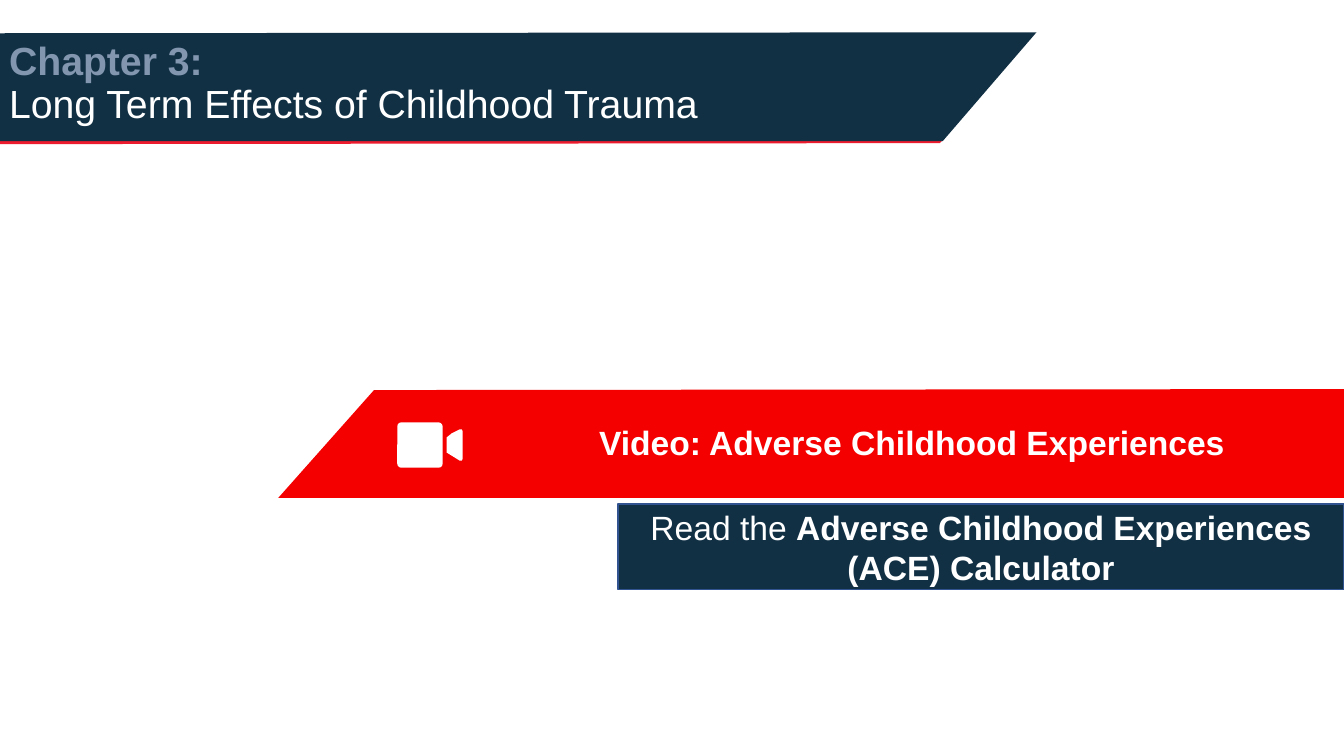
import pptx
import pptx.util
import pptx.dml.color
import pptx.enum.shapes
import pptx.enum.text

Inches = pptx.util.Inches
RGB = pptx.dml.color.RGBColor.from_string
ALIGN = pptx.enum.text.PP_ALIGN
ANCHOR = pptx.enum.text.MSO_ANCHOR
SHAPE = pptx.enum.shapes.MSO_SHAPE

THEME = {
    "font": "Arial",
    "title_size": pptx.util.Pt(28),
    "label_size": pptx.util.Pt(24),
    "navy": RGB("113044"),
    "crimson": RGB("ED1B2E"),
    "red": RGB("F50000"),
    "white": RGB("FFFFFF"),
    "slate": RGB("8296B0"),
    "outline": RGB("31538F"),
}


def paint(shape, color):
    """Give the shape a flat fill without line or shadow."""
    shape.shadow.inherit = False
    shape.fill.solid()
    shape.fill.fore_color.rgb = THEME[color]
    shape.line.fill.background()


def add_run(paragraph, text, size, color, bold):
    run = paragraph.add_run()
    run.text = text
    font_format = {"name": THEME["font"], "size": THEME[size], "bold": bold}
    for attribute, value in font_format.items():
        setattr(run.font, attribute, value)
    run.font.color.rgb = THEME[color]


presentation = pptx.Presentation()
presentation.slide_width = Inches(13.33)
presentation.slide_height = Inches(7.5)
slide = presentation.slides.add_slide(presentation.slide_layouts[5])
shapes = slide.shapes

# Slanted bands and the camera lens
outlines = [
    ("crimson", [(-0.01, 1.38), (9.36, 1.38), (9.32, 1.42), (-0.01, 1.43)]),
    ("navy", [(10.28, 0.32), (-0.01, 0.33), (-0.01, 1.4), (9.35, 1.4)]),
    ("red", [(2.76, 4.94), (13.33, 4.94), (13.33, 3.86), (3.71, 3.87)]),
    ("white", [(4.56, 4.26), (4.48, 4.3), (4.43, 4.34), (4.43, 4.49), (4.48, 4.52),
               (4.56, 4.57), (4.58, 4.57), (4.59, 4.55), (4.59, 4.28), (4.58, 4.26)]),
]
for color, corners in outlines:
    start, *others = [(Inches(x), Inches(y)) for x, y in corners]
    builder = shapes.build_freeform(*start)
    builder.add_line_segments(others, close=True)
    paint(builder.convert_to_shape(), color)

camera_body = shapes.add_shape(
    SHAPE.ROUNDED_RECTANGLE, Inches(3.94), Inches(4.19), Inches(0.45), Inches(0.45))
camera_body.adjustments[0] = 0.09
paint(camera_body, "white")

# Reading box
reading = shapes.add_shape(
    SHAPE.RECTANGLE, Inches(6.13), Inches(5), Inches(7.2), Inches(0.85))
paint(reading, "navy")
reading.line.color.rgb = THEME["outline"]
reading.line.width = pptx.util.Pt(1)
reading.text_frame.vertical_anchor = ANCHOR.MIDDLE
reading_line = reading.text_frame.paragraphs[0]
reading_line.alignment = ALIGN.CENTER
add_run(reading_line, "Read the ", "label_size", "white", False)
add_run(reading_line, "Adverse Childhood Experiences (ACE) Calculator",
        "label_size", "white", True)

# Chapter title, raised above its band
title = shapes.title
shapes._spTree.append(title._element)
title_box = {"left": -0.01, "top": 0.11, "width": 11.5, "height": 1.45}
for side, length in title_box.items():
    setattr(title, side, Inches(length))
title_frame = title.text_frame
title_frame.auto_size = pptx.enum.text.MSO_AUTO_SIZE.NONE
title_frame.vertical_anchor = ANCHOR.MIDDLE
title_line = title_frame.paragraphs[0]
title_line.alignment = ALIGN.LEFT
title_line.line_spacing = 0.9
add_run(title_line, "Chapter 3: ", "title_size", "slate", True)
title_line.add_line_break()
add_run(title_line, "Long Term Effects of Childhood Trauma", "title_size", "white", False)

# Video label
video = shapes.add_textbox(Inches(4.88), Inches(4.14), Inches(8.33), Inches(0.91))
video.text_frame.word_wrap = True
video_line = video.text_frame.paragraphs[0]
video_line.alignment = ALIGN.CENTER
add_run(video_line, "Video: Adverse Childhood Experiences", "label_size", "white", True)

presentation.save("out.pptx")
